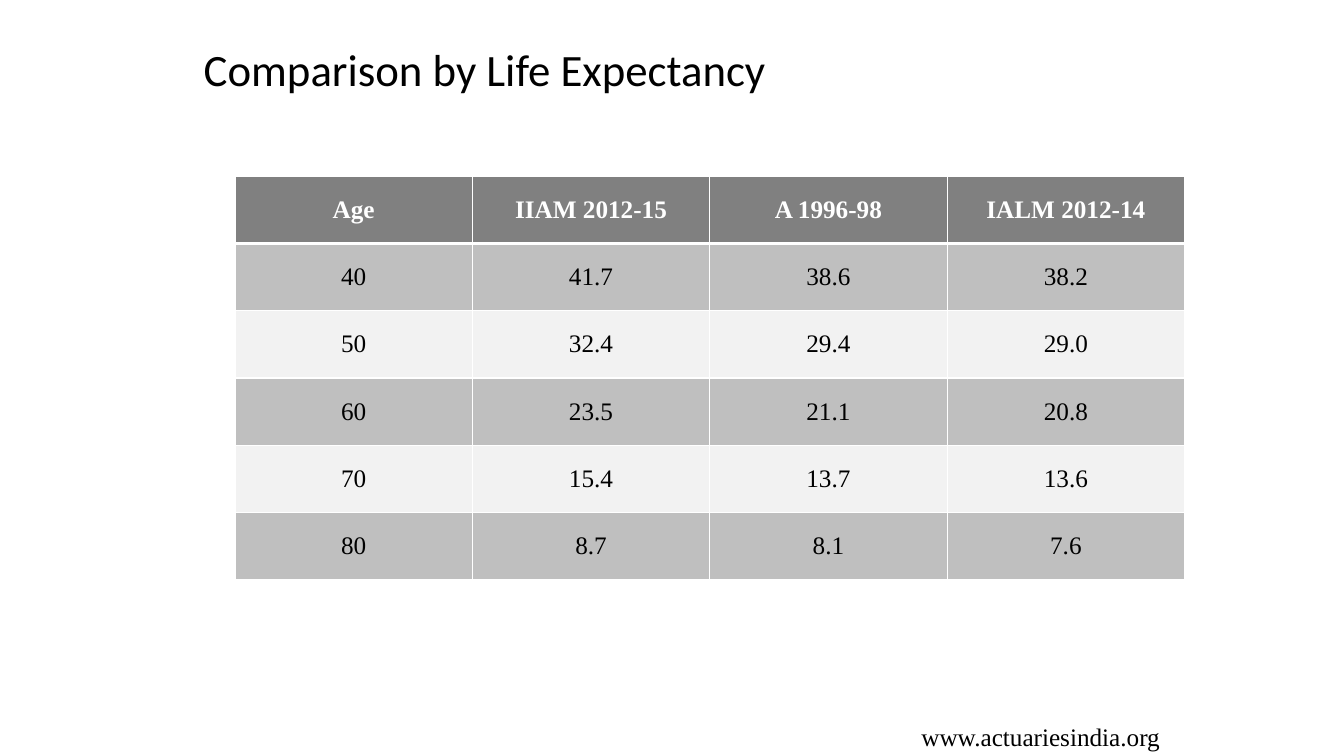
import pptx
import pptx.dml.color
import pptx.enum.text
import pptx.oxml
import pptx.oxml.ns
import pptx.util
from lxml import etree
from pptx.util import Inches

COLORS = {
    "text": "000000",
    "white": "FFFFFF",
    "header": "808080",
    "odd_row": "BFBFBF",
    "even_row": "F2F2F2",
}
LIFE_EXPECTANCY = [
    ["Age", "IIAM 2012-15", "A 1996-98", "IALM 2012-14"],
    ["40", "41.7", "38.6", "38.2"],
    ["50", "32.4", "29.4", "29.0"],
    ["60", "23.5", "21.1", "20.8"],
    ["70", "15.4", "13.7", "13.6"],
    ["80", "8.7", "8.1", "7.6"],
]


class SlideBuilder:
    heading_font = "Calibri"
    body_font = "Times New Roman"
    body_size = 18

    def __init__(self, presentation):
        self.slide = presentation.slides.add_slide(presentation.slide_layouts[5])

    def color(self, name):
        return pptx.dml.color.RGBColor.from_string(COLORS[name])

    def set_text(self, frame, text, align, font_name, size, color="text", bold=False):
        frame.text = text
        paragraph = frame.paragraphs[0]
        paragraph.alignment = align
        paragraph.font.name = font_name
        paragraph.font.size = pptx.util.Pt(size)
        paragraph.font.bold = bold
        paragraph.font.color.rgb = self.color(color)

    def title(self, text, left, top, width, height):
        heading = self.slide.shapes.title
        heading.left, heading.top = Inches(left), Inches(top)
        heading.width, heading.height = Inches(width), Inches(height)
        frame = heading.text_frame
        frame.vertical_anchor = pptx.enum.text.MSO_ANCHOR.MIDDLE
        self.set_text(frame, text, pptx.enum.text.PP_ALIGN.LEFT, self.heading_font, 32)

    def text(self, text, left, top, width, height):
        box = self.slide.shapes.add_textbox(
            Inches(left), Inches(top), Inches(width), Inches(height))
        box.text_frame.word_wrap = True
        self.set_text(box.text_frame, text, pptx.enum.text.PP_ALIGN.LEFT,
                      self.body_font, self.body_size)

    def border(self, cell, side, points):
        properties = cell._tc.get_or_add_tcPr()
        line = etree.SubElement(properties, pptx.oxml.ns.qn(f"a:ln{side}"),
                                w=str(pptx.util.Pt(points)))
        fill = etree.SubElement(line, pptx.oxml.ns.qn("a:solidFill"))
        etree.SubElement(fill, pptx.oxml.ns.qn("a:srgbClr"), val=COLORS["white"])

    def table(self, rows, left, top, width, height):
        grid = self.slide.shapes.add_table(
            len(rows), len(rows[0]),
            Inches(left), Inches(top), Inches(width), Inches(height)).table
        for row_index, row in enumerate(rows):
            is_header = row_index == 0
            band = "header" if is_header else "odd_row" if row_index % 2 else "even_row"
            widths = {"L": 1, "R": 1, "T": 3 if row_index == 1 else 1,
                      "B": 3 if is_header else 1}
            for column_index, value in enumerate(row):
                cell = grid.cell(row_index, column_index)
                cell.vertical_anchor = pptx.enum.text.MSO_ANCHOR.MIDDLE
                for side, points in widths.items():
                    self.border(cell, side, points)
                cell.fill.solid()
                cell.fill.fore_color.rgb = self.color(band)
                self.set_text(cell.text_frame, value, pptx.enum.text.PP_ALIGN.CENTER,
                              self.body_font, self.body_size,
                              "white" if is_header else "text", is_header)


def main():
    presentation = pptx.Presentation()
    presentation.slide_width = Inches(13.33)
    presentation.slide_height = Inches(7.5)
    builder = SlideBuilder(presentation)
    builder.title("Comparison by Life Expectancy", 1.92, 0.25, 9.92, 0.86)
    builder.text("www.actuariesindia.org", 9.04, 7.11, 3.17, 0.4)
    builder.table(LIFE_EXPECTANCY, 2.33, 1.75, 9.42, 4)
    presentation.save("out.pptx")


if __name__ == "__main__":
    main()
